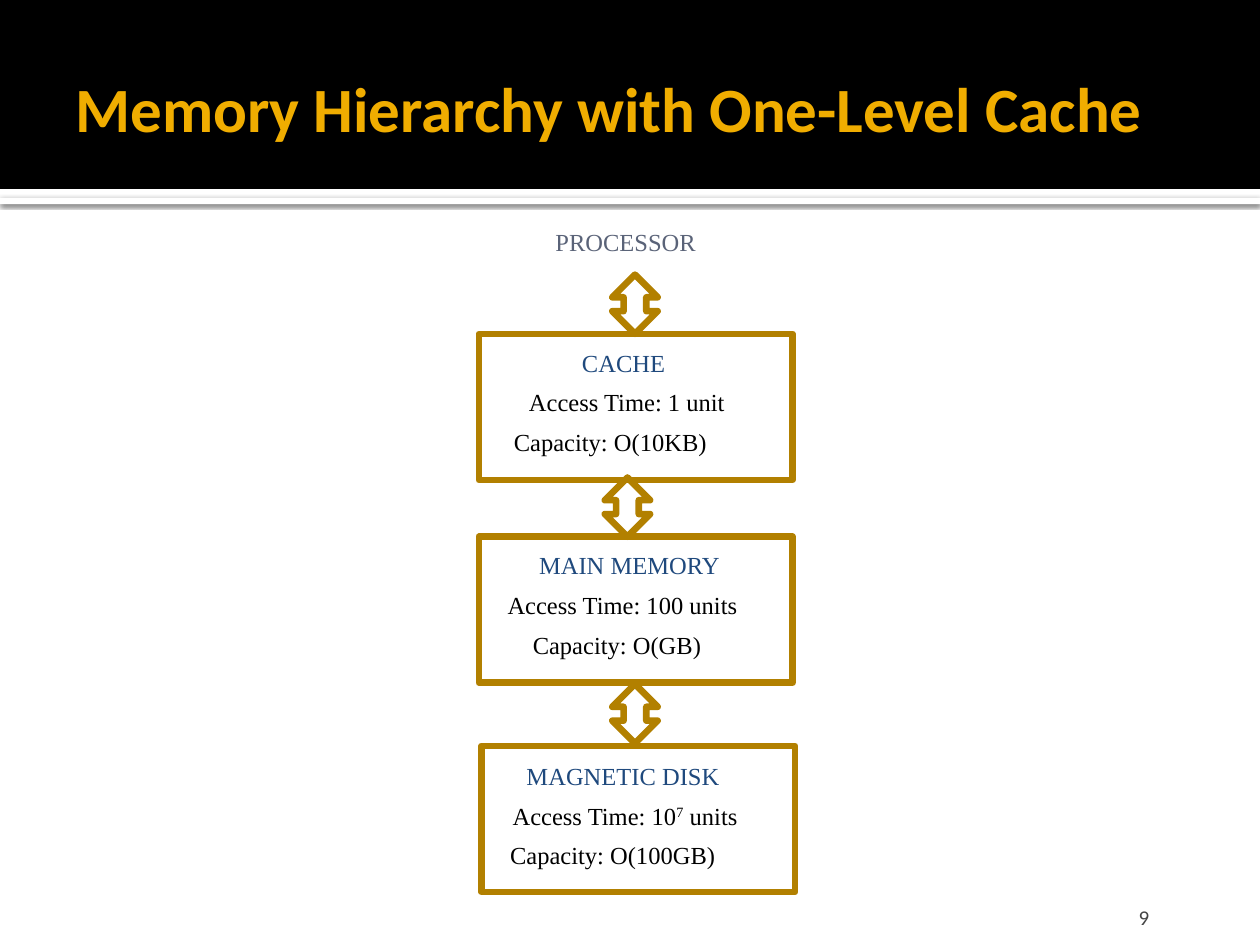
from lxml import etree
from pptx import Presentation
from pptx.dml.color import RGBColor
from pptx.enum.shapes import MSO_SHAPE
from pptx.enum.text import MSO_ANCHOR, MSO_AUTO_SIZE, PP_ALIGN
from pptx.util import Inches, Pt

RECT, ARROW = MSO_SHAPE.RECTANGLE, MSO_SHAPE.UP_DOWN_ARROW
MIDDLE, BOTTOM = MSO_ANCHOR.MIDDLE, MSO_ANCHOR.BOTTOM
BLACK = RGBColor(0x00, 0x00, 0x00)
WHITE = RGBColor(0xFF, 0xFF, 0xFF)
GOLD = RGBColor(0xF0, 0xAD, 0x00)
OUTLINE = RGBColor(0xB2, 0x80, 0x00)
SLATE = RGBColor(0x5A, 0x63, 0x78)
NAVY = RGBColor(0x1F, 0x49, 0x7D)
GREY = RGBColor(0x45, 0x45, 0x45)
SERIF, SANS = "Times New Roman", "Calibri"

SHADOW = """<a:effectLst xmlns:a="http://schemas.openxmlformats.org/drawingml/2006/main">
<a:outerShdw blurRad="31750" dist="10160" dir="5400000" algn="tl" rotWithShape="0">
<a:srgbClr val="000000"><a:alpha val="60000"/></a:srgbClr></a:outerShdw></a:effectLst>"""

prs = Presentation()
prs.slide_width, prs.slide_height = Inches(10), Inches(7.5)
s = prs.slides.add_slide(prs.slide_layouts[6])


def add_shape(kind, box, fill=None):
    """Add a borderless filled shape, or a gold outline when fill is None."""
    sp = s.shapes.add_shape(kind, *map(Inches, box))
    sp.shadow.inherit = False
    if fill is None:
        sp.fill.background()
        sp.line.color.rgb = OUTLINE
        sp.line.width = Pt(3.78)
    else:
        sp.fill.solid()
        sp.fill.fore_color.rgb = fill
        sp.line.fill.background()
    return sp


def add_text(box, text, color, size=14, font=SERIF, bold=False, **frame):
    """Add one line of text; odd pieces between ^ marks are superscript."""
    tf = s.shapes.add_textbox(*map(Inches, box)).text_frame
    tf.word_wrap = True
    for name, value in frame.items():
        setattr(tf, name, value)
    p = tf.paragraphs[0]
    for i, piece in enumerate(text.split("^")):
        r = p.add_run()
        r.text = piece
        for name, value in {"size": Pt(size), "name": font, "bold": bold}.items():
            setattr(r.font, name, value)
        r.font.color.rgb = color
        if i % 2:
            r._r.get_or_add_rPr().set("baseline", "30000")
    return p


# Title band
rule = add_shape(RECT, (0, 1.57, 10, 0.05), WHITE)
spPr = rule._element.spPr
spPr.replace(spPr.find("{*}effectLst"), etree.fromstring(SHADOW))
add_shape(RECT, (0, 0, 10, 1.5), BLACK)
add_text((0.5, 0.17, 9, 1.37), "Memory Hierarchy with One-Level Cache", GOLD, 36, SANS, True,
         vertical_anchor=MIDDLE, margin_right=Inches(0.05))

# Memory levels: box corner, first text top, then left, width and text of each line
levels = [
    (3.8, 2.65, 2.71, [(4.52, 1.01, "CACHE"), (4.1, 1.9, "Access Time: 1 unit"),
                       (3.98, 2.23, "Capacity: O(10KB)")]),
    (3.8, 4.26, 4.32, [(4.18, 2, "MAIN MEMORY"), (3.93, 2.24, "Access Time: 100 units"),
                       (4.13, 1.99, "Capacity: O(GB)")]),
    (3.82, 5.92, 5.99, [(4.08, 2.09, "MAGNETIC DISK"), (3.97, 2.28, "Access Time: 10^7^ units"),
                        (3.95, 2.4, "Capacity: O(100GB)")]),
]
LINE_PITCH = 0.315
GROW = MSO_AUTO_SIZE.SHAPE_TO_FIT_TEXT

add_text((4.31, 1.75, 1.57, 0.34), "PROCESSOR", SLATE, auto_size=GROW)
for left, top, text_top, lines in levels:
    add_shape(RECT, (left, top, 2.49, 1.16))
    for i, (x, width, text) in enumerate(lines):
        add_text((x, text_top + i * LINE_PITCH, width, 0.34), text,
                 BLACK if i else NAVY, auto_size=GROW)

for left, top in [(4.86, 2.18), (4.8, 3.79), (4.86, 5.43)]:
    add_shape(ARROW, (left, top, 0.36, 0.47))

# Slide number
p = add_text((8.42, 7.08, 0.8, 0.3), "9", GREY, 12, SANS,
             vertical_anchor=BOTTOM, margin_bottom=0)
p.alignment = PP_ALIGN.RIGHT

prs.save("out.pptx")
